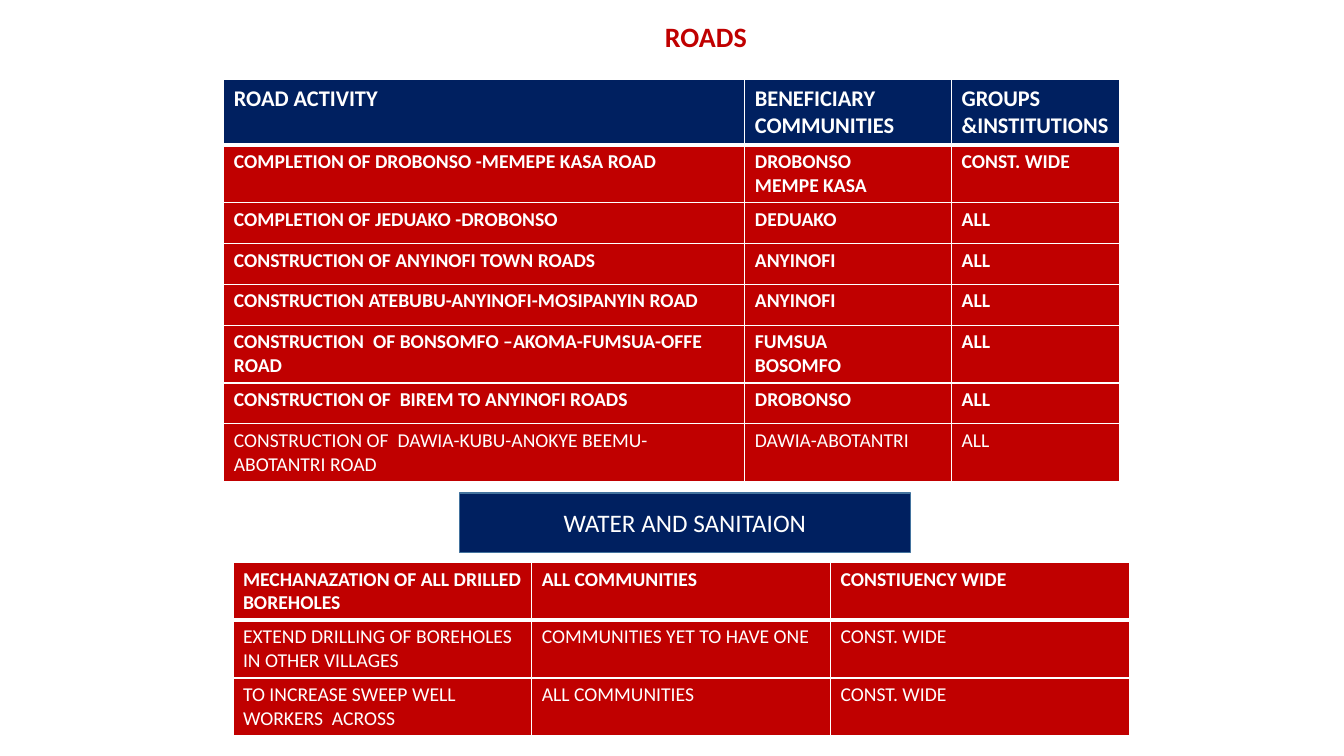
from lxml import etree
from pptx import Presentation
from pptx.dml.color import RGBColor
from pptx.enum.shapes import MSO_SHAPE
from pptx.enum.text import MSO_ANCHOR, PP_ALIGN
from pptx.oxml.ns import qn
from pptx.util import Cm, Pt

RECTANGLE = MSO_SHAPE.RECTANGLE
MIDDLE = MSO_ANCHOR.MIDDLE
CENTER = PP_ALIGN.CENTER

THEME = {
    "font": "Calibri",
    "navy": "002060",
    "red": "C00000",
    "white": "FFFFFF",
    "outline": "43739E",
    "title": 20,
    "section": 18,
    "header": 16,
    "body": 14,
    "rule": 1,
    "header_rule": 3,
}

ONE_LINE, TWO_LINES, HEADER = 1.03, 1.45, 1.6

ROADS = [
    (HEADER, True, "ROAD ACTIVITY", "BENEFICIARY COMMUNITIES", "GROUPS &INSTITUTIONS"),
    (TWO_LINES, True, "COMPLETION OF DROBONSO -MEMEPE KASA ROAD", "DROBONSO\nMEMPE KASA", "CONST. WIDE"),
    (ONE_LINE, True, "COMPLETION OF JEDUAKO -DROBONSO", "DEDUAKO", "ALL"),
    (ONE_LINE, True, "CONSTRUCTION OF ANYINOFI TOWN ROADS", "ANYINOFI", "ALL"),
    (ONE_LINE, True, "CONSTRUCTION ATEBUBU-ANYINOFI-MOSIPANYIN ROAD", "ANYINOFI", "ALL"),
    (TWO_LINES, True, "CONSTRUCTION  OF BONSOMFO –AKOMA-FUMSUA-OFFE ROAD", "FUMSUA\nBOSOMFO", "ALL"),
    (ONE_LINE, True, "CONSTRUCTION OF  BIREM TO ANYINOFI ROADS", "DROBONSO", "ALL"),
    (TWO_LINES, False, "CONSTRUCTION OF  DAWIA-KUBU-ANOKYE BEEMU-ABOTANTRI ROAD", "DAWIA-ABOTANTRI", "ALL"),
]
WATER = [
    (TWO_LINES, True, "MECHANAZATION OF ALL DRILLED BOREHOLES", "ALL COMMUNITIES", "CONSTIUENCY WIDE"),
    (TWO_LINES, False, "EXTEND DRILLING OF BOREHOLES IN OTHER VILLAGES", "COMMUNITIES YET TO HAVE ONE", "CONST. WIDE"),
    (TWO_LINES, False, "TO INCREASE SWEEP WELL WORKERS  ACROSS", "ALL COMMUNITIES", "CONST. WIDE"),
]


def write(frame, text, size, color, bold):
    frame.text = text
    formats = {"name": THEME["font"], "size": Pt(THEME[size]), "bold": bold}
    for paragraph in frame.paragraphs:
        for attribute, value in formats.items():
            setattr(paragraph.runs[0].font, attribute, value)
        paragraph.runs[0].font.color.rgb = RGBColor.from_string(THEME[color])


def rule_cell(cell, top, bottom):
    properties = cell._tc.get_or_add_tcPr()
    for side, weight in (("L", "rule"), ("R", "rule"), ("T", top), ("B", bottom)):
        border = etree.SubElement(properties, qn(f"a:ln{side}"), w=str(Pt(THEME[weight])))
        fill = etree.SubElement(border, qn("a:solidFill"))
        etree.SubElement(fill, qn("a:srgbClr"), val=THEME["white"])


deck = Presentation()
deck.slide_width, deck.slide_height = Cm(33.87), Cm(19.05)
slide = deck.slides.add_slide(deck.slide_layouts[6])

for rows, left, top, widths, header_fill, header_size in (
    (ROADS, 5.64, 2.01, (13.13, 5.21, 4.24), "navy", "header"),
    (WATER, 5.87, 14.17, (7.53, 7.53, 7.53), "red", "body"),
):
    height = sum(row[0] for row in rows)
    table = slide.shapes.add_table(
        len(rows), len(widths), Cm(left), Cm(top), Cm(sum(widths)), Cm(height)
    ).table
    table.horz_banding = False
    for column, width in zip(table.columns, widths):
        column.width = Cm(width)
    for index, (row_height, bold, *entries) in enumerate(rows):
        table.rows[index].height = Cm(row_height)
        for position, entry in enumerate(entries):
            cell = table.cell(index, position)
            rule_cell(
                cell,
                "header_rule" if index == 1 else "rule",
                "header_rule" if index == 0 else "rule",
            )
            cell.fill.solid()
            fill = header_fill if index == 0 else "red"
            cell.fill.fore_color.rgb = RGBColor.from_string(THEME[fill])
            write(cell.text_frame, entry, header_size if index == 0 else "body", "white", bold)

for heading, top, width, height, fill, outline, size, color, bold in (
    ("WATER AND SANITAION", 12.42, 11.36, 1.5, "navy", "outline", "section", "white", False),
    ("ROADS", 0.3, 12.42, 1.24, "white", "white", "title", "red", True),
):
    banner = slide.shapes.add_shape(RECTANGLE, Cm(11.58), Cm(top), Cm(width), Cm(height))
    banner.shadow.inherit = False
    banner.fill.solid()
    banner.fill.fore_color.rgb = RGBColor.from_string(THEME[fill])
    banner.line.color.rgb = RGBColor.from_string(THEME[outline])
    banner.line.width = Pt(THEME["rule"])
    write(banner.text_frame, heading, size, color, bold)
    banner.text_frame.vertical_anchor = MIDDLE
    banner.text_frame.paragraphs[0].alignment = CENTER

deck.save("out.pptx")
